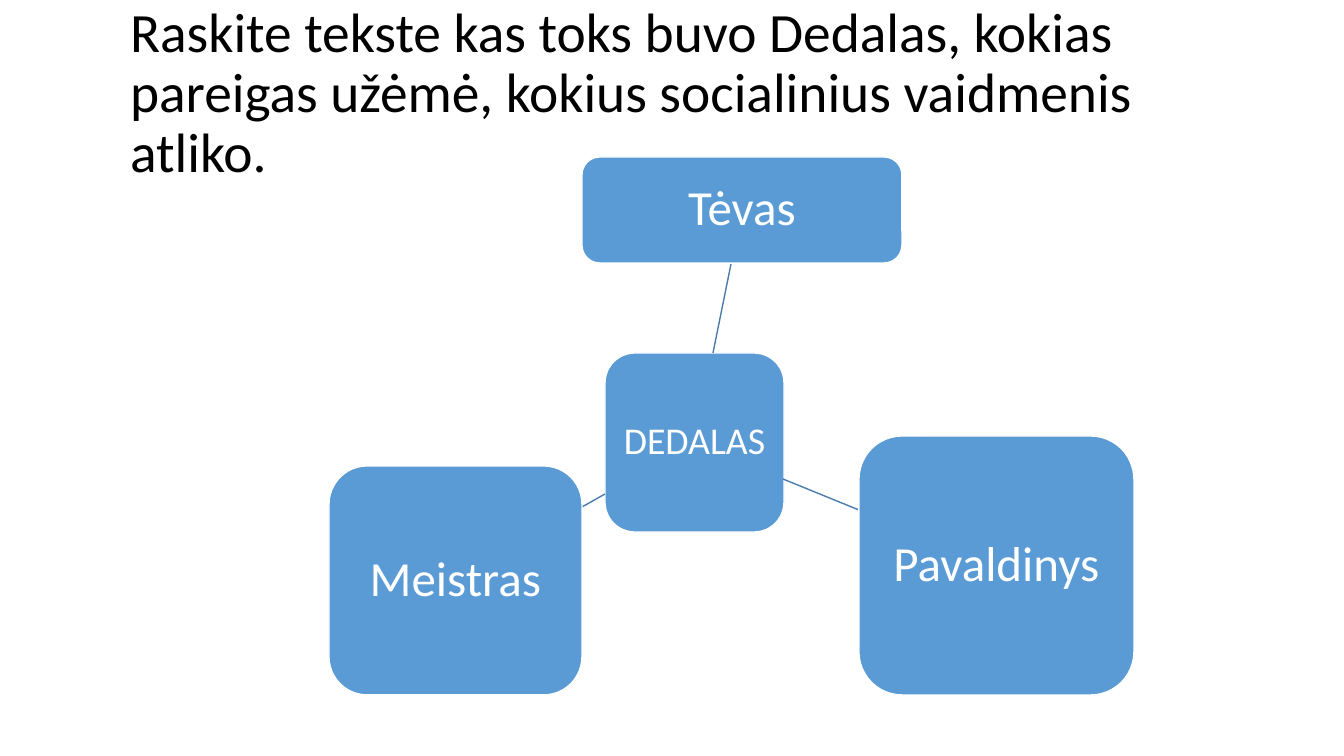
from lxml.etree import SubElement
from pptx import Presentation
from pptx.dml.color import RGBColor
from pptx.enum.shapes import MSO_CONNECTOR, MSO_SHAPE
from pptx.enum.text import MSO_ANCHOR, MSO_AUTO_SIZE, PP_ALIGN
from pptx.oxml.ns import qn
from pptx.util import Emu, Pt

COLORS = {"text": "000000", "box": "5B9BD5", "on_box": "FFFFFF", "link": "497CAB"}
FONT = "Calibri"
PX = 914400 / 100.8


def px(*lengths):
    return [Emu(round(length * PX)) for length in lengths]


def color(name):
    return RGBColor.from_string(COLORS[name])


class RoleMap:
    def __init__(self, deck):
        self.page = deck.slides.add_slide(deck.slide_layouts[5])

    def set_text(self, frame, text, size, ink, align):
        frame.word_wrap = True
        frame.auto_size = MSO_AUTO_SIZE.NONE
        frame.vertical_anchor = MSO_ANCHOR.MIDDLE
        para = frame.paragraphs[0]
        para.text = text
        para.alignment = align
        para.line_spacing = 0.9
        para.font.name = FONT
        para.font.size = Pt(size)
        para.font.color.rgb = color(ink)

    def title(self, bounds, text):
        title = self.page.shapes.title
        title.left, title.top, title.width, title.height = px(*bounds)
        self.set_text(title.text_frame, text, 39.6, "text", PP_ALIGN.LEFT)

    def box(self, bounds, text, size, inset):
        box = self.page.shapes.add_shape(MSO_SHAPE.ROUNDED_RECTANGLE, *px(*bounds))
        box.shadow.inherit = False
        box.fill.solid()
        box.fill.fore_color.rgb = color("box")
        box.line.color.rgb = color("on_box")
        box.line.width = Pt(1)
        frame = box.text_frame
        frame.margin_left, frame.margin_top, frame.margin_right, frame.margin_bottom = px(*[inset] * 4)
        self.set_text(frame, text, size, "on_box", PP_ALIGN.CENTER)

    def link(self, ends):
        link = self.page.shapes.add_connector(MSO_CONNECTOR.STRAIGHT, *px(*ends))
        link.line.color.rgb = color("link")
        link.line.width = Pt(1)
        SubElement(link._element.spPr, qn("a:effectLst"))


def main():
    deck = Presentation()
    deck.slide_width, deck.slide_height = px(1344, 756)
    role_map = RoleMap(deck)
    role_map.title(
        (120, 55, 1159, 146),
        "Raskite tekste kas toks buvo Dedalas, kokias pareigas užėmė, "
        "kokius socialinius vaidmenis atliko.\v",
    )
    role_map.box((605, 353, 179, 179), "DEDALAS", 27, 7)
    roles = [
        ("Tėvas", (582, 157, 320, 106), (713, 353, 731, 264)),
        ("Pavaldinys", (859, 436, 275, 259), (783, 479, 859, 510)),
        ("Meistras", (329, 466, 253, 229), (605, 494, 582, 507)),
    ]
    for role, bounds, ends in roles:
        role_map.link(ends)
        role_map.box(bounds, role, 35, 10)
    deck.save("out.pptx")


if __name__ == "__main__":
    main()
